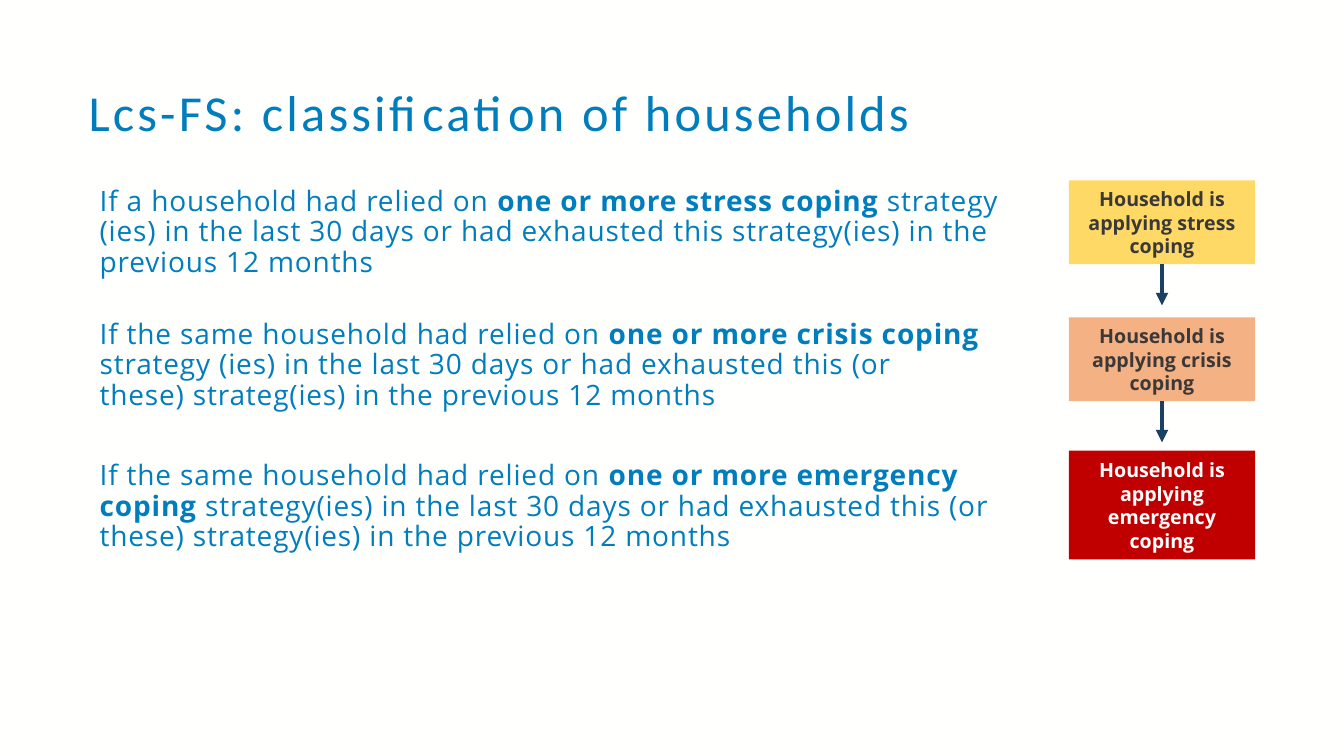
from lxml import etree
from pptx import Presentation
from pptx.dml.color import RGBColor
from pptx.enum.shapes import MSO_CONNECTOR, MSO_SHAPE
from pptx.enum.text import MSO_ANCHOR, PP_ALIGN
from pptx.oxml.ns import qn
from pptx.util import Inches, Pt

RECTANGLE = MSO_SHAPE.RECTANGLE
STRAIGHT = MSO_CONNECTOR.STRAIGHT
MIDDLE, TOP = MSO_ANCHOR.MIDDLE, MSO_ANCHOR.TOP
CENTER = PP_ALIGN.CENTER

BACKGROUND = RGBColor(0xFF, 0xFF, 0xFE)
BLUE = RGBColor(0x00, 0x7D, 0xBC)
NAVY = RGBColor(0x1A, 0x41, 0x61)
DARK_GREY = RGBColor(0x3B, 0x38, 0x38)
WHITE = RGBColor(0xFF, 0xFF, 0xFF)
YELLOW = RGBColor(0xFF, 0xD9, 0x66)
ORANGE = RGBColor(0xF4, 0xB1, 0x83)
RED = RGBColor(0xC0, 0x00, 0x00)

TITLE = "Lcs-FS: classification of households"
# top, width, (text, bold) runs
RULES = [
    (1.81, 9.27, [
        ("If a household had relied on ", False),
        ("one or more stress coping", True),
        (" strategy (ies) in the last 30 days or had exhausted this "
         "strategy(ies) in the previous 12 months", False)]),
    (3.13, 8.93, [
        ("If the same household had relied on ", False),
        ("one or more crisis coping ", True),
        ("strategy (ies) in the last 30 days or had exhausted this "
         "(or these) strateg(ies) in the previous 12 months", False)]),
    (4.53, 9.27, [
        ("If the same household had relied on ", False),
        ("one or more emergency coping", True),
        (" strategy(ies) in the last 30 days or had exhausted this "
         "(or these) strategy(ies) in the previous 12 months", False)]),
]
# label, top, height, fill, text colour
STAGES = [
    ("Household is applying stress coping", 1.79, 0.83, YELLOW, DARK_GREY),
    ("Household is applying crisis coping", 3.15, 0.83, ORANGE, DARK_GREY),
    ("Household is applying emergency coping", 4.47, 1.08, RED, WHITE),
]
RULE_LEFT, RULE_HEIGHT = 0.89, 1.01
STAGE_LEFT, STAGE_WIDTH = 10.6, 1.85
ARROW_LENGTH = 0.41


def set_font(paragraph, name, size, color):
    paragraph.font.name = name
    paragraph.font.size = Pt(size)
    paragraph.font.color.rgb = color


def add_spaced_text(slide, box, runs, font_name, size, spacing, anchor):
    """Add a text box whose letters are spaced by hundredths of a point."""
    frame = slide.shapes.add_textbox(*map(Inches, box)).text_frame
    frame.word_wrap = True
    frame.vertical_anchor = anchor
    paragraph = frame.paragraphs[0]
    paragraph.line_spacing = 0.9
    set_font(paragraph, font_name, size, BLUE)
    for text, bold in runs:
        run = paragraph.add_run()
        run.text = text
        run.font.bold = bold
        run.font._element.set("spc", str(spacing))


def add_stage(slide, label, top, height, fill, color):
    shape = slide.shapes.add_shape(
        RECTANGLE, *map(Inches, (STAGE_LEFT, top, STAGE_WIDTH, height)))
    shape.shadow.inherit = False
    shape.fill.solid()
    shape.fill.fore_color.rgb = fill
    shape.line.fill.background()
    shape.text_frame.word_wrap = True
    shape.text_frame.vertical_anchor = MIDDLE
    paragraph = shape.text_frame.paragraphs[0]
    paragraph.text = label
    paragraph.alignment = CENTER
    set_font(paragraph, "Open Sans", 14, color)
    paragraph.font.bold = True


def add_down_arrow(slide, top):
    center = STAGE_LEFT + STAGE_WIDTH / 2
    arrow = slide.shapes.add_connector(
        STRAIGHT, *map(Inches, (center, top, center, top + ARROW_LENGTH)))
    arrow.line.color.rgb = NAVY
    arrow.line.width = Pt(3)
    etree.SubElement(arrow.line._get_or_add_ln(), qn("a:tailEnd"), type="triangle")
    etree.SubElement(arrow._element.spPr, qn("a:effectLst"))


def main():
    presentation = Presentation()
    presentation.slide_width = Inches(13.33)
    presentation.slide_height = Inches(7.5)
    slide = presentation.slides.add_slide(presentation.slide_layouts[6])
    slide.background.fill.solid()
    slide.background.fill.fore_color.rgb = BACKGROUND

    add_spaced_text(slide, (0.78, 0.78, 12.09, 0.72), [(TITLE, False)],
                    "Calibri", 36, 230, MIDDLE)
    for top, width, runs in RULES:
        add_spaced_text(slide, (RULE_LEFT, top, width, RULE_HEIGHT), runs,
                        "Open Sans", 20, 60, TOP)
    for stage in STAGES:
        add_stage(slide, *stage)
    for _, top, height, _, _ in STAGES[:-1]:
        add_down_arrow(slide, top + height)

    presentation.save("out.pptx")


if __name__ == "__main__":
    main()
